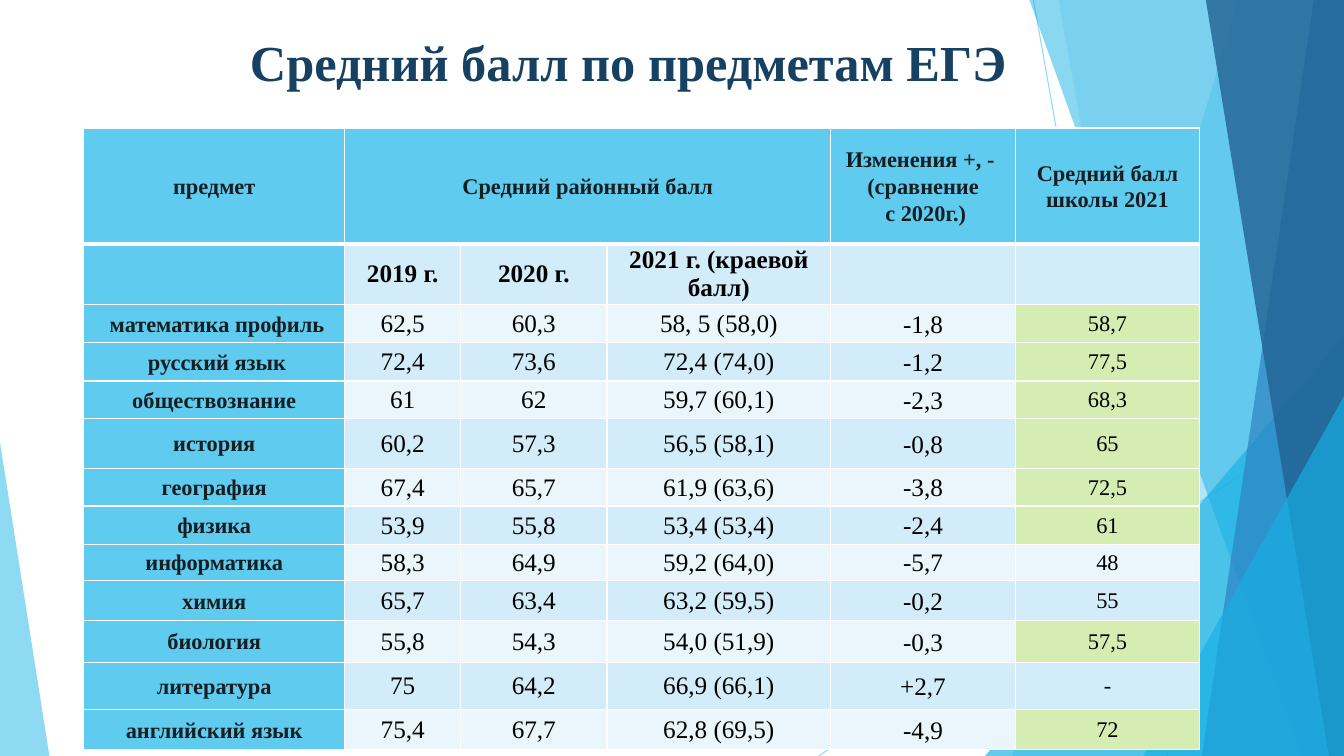
from lxml import etree
from pptx import Presentation
from pptx.dml.color import RGBColor
from pptx.enum.shapes import MSO_CONNECTOR, MSO_SHAPE
from pptx.enum.text import MSO_ANCHOR, PP_ALIGN
from pptx.oxml.ns import qn
from pptx.util import Inches, Pt

STRAIGHT = MSO_CONNECTOR.STRAIGHT
TRIANGLE = MSO_SHAPE.ISOSCELES_TRIANGLE
CENTER, LEFT = PP_ALIGN.CENTER, PP_ALIGN.LEFT
MIDDLE, TOP = MSO_ANCHOR.MIDDLE, MSO_ANCHOR.TOP

WIDTH, HEIGHT = 13.33, 7.5
FONT = "Times New Roman"
COLORS = {
    "sky": "5FCBEF", "cyan": "17B0E4", "blue": "2E83C3", "navy": "226292",
    "title": "174162", "ink": "161E22", "black": "000000", "white": "FFFFFF",
    "dark band": "D2ECF9", "light band": "EAF6FC", "green": "D5EDB3",
}

COLUMNS = [2.59, 1.15, 1.45, 2.22, 1.83, 1.83]
ROWS = [1.15, 0.34, 0.38, 0.38, 0.37, 0.5, 0.37, 0.38, 0.36, 0.4, 0.41, 0.47, 0.4]
SUBJECT, CHANGE, SCHOOL = 0, 4, 5
HEADER, YEARS = 0, 1
SCORES = [
    ["предмет", "Средний районный балл", "", "",
     "Изменения +, - \n(сравнение\n с 2020г.)", "Средний балл школы 2021"],
    ["", "2019 г.", "2020 г.", "2021 г. (краевой балл)", "", ""],
    [" математика профиль", "62,5", "60,3", "58, 5 (58,0)", "-1,8", "58,7"],
    [" русский язык", "72,4", "73,6", "72,4 (74,0)", "-1,2", "77,5"],
    ["обществознание", "61", "62", "59,7 (60,1)", "-2,3", "68,3"],
    ["история", "60,2", "57,3", "56,5 (58,1)", "-0,8", "65"],
    ["география", "67,4", "65,7", "61,9 (63,6)", "-3,8", "72,5"],
    ["физика", "53,9", "55,8", "53,4 (53,4)", "-2,4", "61"],
    ["информатика", "58,3", "64,9", "59,2 (64,0)", "-5,7", "48"],
    ["химия", "65,7", "63,4", "63,2 (59,5)", "-0,2", "55"],
    ["биология", "55,8", "54,3", "54,0 (51,9)", "-0,3", "57,5"],
    ["литература", "75", "64,2", "66,9 (66,1)", "+2,7", "-"],
    ["английский язык", "75,4", "67,7", "62,8 (69,5)", "-4,9", "72"],
]
GREEN_ROWS = {2, 3, 4, 5, 6, 7, 10, 12}


def rgb(name):
    return RGBColor.from_string(COLORS[name])


def set_opacity(shape, percent):
    for color in shape._element.spPr.iter(qn("a:srgbClr")):
        etree.SubElement(color, qn("a:alpha")).set("val", str(percent * 1000))


def paint(shape, color, percent):
    shape.shadow.inherit = False
    shape.fill.solid()
    shape.fill.fore_color.rgb = rgb(color)
    shape.line.fill.background()
    set_opacity(shape, percent)


def add_ray(slide, start, end):
    ray = slide.shapes.add_connector(STRAIGHT, *map(Inches, start + end))
    ray.line.color.rgb = rgb("sky")
    ray.line.width = Pt(0.75)
    set_opacity(ray, 70)
    etree.SubElement(ray._element.spPr, qn("a:effectLst"))


def add_facet(slide, top_left, top_right, bottom_left, color, percent):
    """Full-height band that ends at the right edge of the slide."""
    builder = slide.shapes.build_freeform(Inches(top_left), 0, scale=1.0)
    corners = [(top_right, 0), (top_right, HEIGHT), (bottom_left, HEIGHT)]
    builder.add_line_segments([(Inches(x), Inches(y)) for x, y in corners], close=True)
    paint(builder.convert_to_shape(), color, percent)


def add_corner(slide, left, top, width, apex, color, percent):
    """Triangle that stands on the bottom edge of the slide."""
    corner = slide.shapes.add_shape(
        TRIANGLE, *map(Inches, (left, top, width, HEIGHT - top)))
    corner.adjustments[0] = apex
    paint(corner, color, percent)


def add_background(slide):
    add_ray(slide, (10.25, 0), (11.58, HEIGHT))
    add_ray(slide, (WIDTH, 4.03), (8.12, HEIGHT))
    add_facet(slide, 12.28, WIDTH, 10.04, "sky", 36)
    add_facet(slide, 10.5, WIDTH, 11.83, "sky", 20)
    add_corner(slide, 9.77, 3.33, WIDTH - 9.77, 1, "cyan", 66)
    add_facet(slide, 10.21, WIDTH, 12.91, "cyan", 50)
    add_facet(slide, 13.03, WIDTH, 11.92, "blue", 70)
    add_facet(slide, 11.96, WIDTH, 13.18, "navy", 80)
    add_corner(slide, 11.34, 3.93, WIDTH - 11.34, 1, "cyan", 66)
    add_corner(slide, 0, 4.39, 0.49, 0, "sky", 70)


def write(text_frame, text, size, color, bold, alignment, spacing=None):
    text_frame.text = text
    for paragraph in text_frame.paragraphs:
        paragraph.alignment = alignment
        paragraph.line_spacing = spacing
        font_format = {"name": FONT, "size": Pt(size), "bold": bold}
        for run in paragraph.runs:
            for name, value in font_format.items():
                setattr(run.font, name, value)
            run.font.color.rgb = rgb(color)


def add_title(slide, left, top, width, height):
    title = slide.shapes.add_textbox(*map(Inches, (left, top, width, height)))
    frame = title.text_frame
    frame_format = {"word_wrap": True, "vertical_anchor": TOP, "margin_top": Inches(0.1)}
    for name, value in frame_format.items():
        setattr(frame, name, value)
    write(frame, "Средний балл по предметам ЕГЭ", 36, "title", True, LEFT)


def set_borders(cell, row):
    properties = cell._tc.get_or_add_tcPr()
    widths = {"a:lnL": 1, "a:lnR": 1,
              "a:lnT": 3 if row == YEARS else 1,
              "a:lnB": 3 if row == HEADER else 1}
    for position, (tag, width) in enumerate(widths.items()):
        border = etree.Element(qn(tag), w=str(Pt(width)))
        fill = etree.SubElement(border, qn("a:solidFill"))
        etree.SubElement(fill, qn("a:srgbClr")).set("val", COLORS["white"])
        properties.insert(position, border)


def cell_fill(row, column):
    if row == HEADER or column == SUBJECT:
        return "sky"
    if column == SCHOOL and row in GREEN_ROWS:
        return "green"
    return "dark band" if row % 2 else "light band"


def fill_cell(cell, row, column, text):
    label = row == HEADER or column == SUBJECT
    loose = label or (column == CHANGE and row != YEARS)
    wide = loose or row == YEARS
    side = Inches(0.07 if wide else 0.01)
    cell_format = {
        "vertical_anchor": MIDDLE, "margin_left": side, "margin_right": side,
        "margin_top": Inches(0 if wide else 0.01), "margin_bottom": 0,
    }
    for name, value in cell_format.items():
        setattr(cell, name, value)
    cell.fill.solid()
    cell.fill.fore_color.rgb = rgb(cell_fill(row, column))
    set_borders(cell, row)
    write(cell.text_frame, text, 16 if label or column == SCHOOL else 18,
          "ink" if label else "black", label or row == YEARS, CENTER,
          1.07 if loose else None)


def add_scores(slide, left, top, height):
    frame = slide.shapes.add_table(
        len(ROWS), len(COLUMNS), *map(Inches, (left, top, sum(COLUMNS), height)))
    table = frame.table
    table.first_row = table.horz_banding = False
    for column, width in zip(table.columns, COLUMNS):
        column.width = Inches(width)
    for row, row_height in zip(table.rows, ROWS):
        row.height = Inches(row_height)
    frame.height = Inches(height)
    for row, texts in enumerate(SCORES):
        for column, text in enumerate(texts):
            fill_cell(table.cell(row, column), row, column, text)
    table.cell(HEADER, 1).merge(table.cell(HEADER, 3))


def main():
    presentation = Presentation()
    presentation.slide_width = Inches(WIDTH)
    presentation.slide_height = Inches(HEIGHT)
    slide = presentation.slides.add_slide(presentation.slide_layouts[6])
    add_background(slide)
    add_title(slide, 2.38, 0.21, WIDTH - 2.38, 1.05)
    add_scores(slide, 0.83, 1.27, 6.17)
    presentation.save("out.pptx")


if __name__ == "__main__":
    main()
